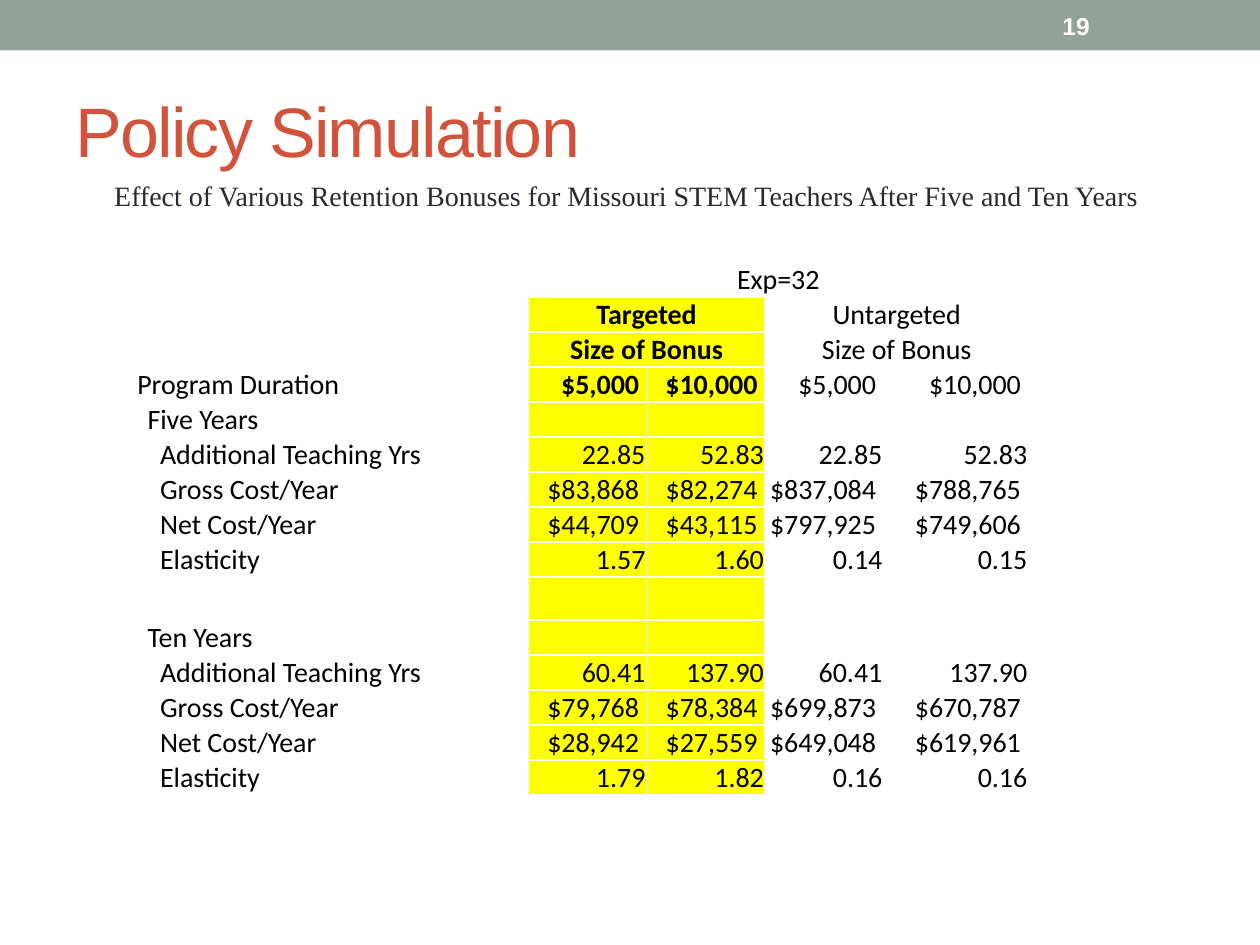
"""Build the Policy Simulation slide with its retention bonus table."""
from dataclasses import dataclass

from pptx import Presentation
from pptx.dml.color import RGBColor as RGB
from pptx.enum.shapes import MSO_SHAPE as Shape
from pptx.enum.text import MSO_ANCHOR as Anchor, PP_ALIGN as Align
from pptx.util import Pt


@dataclass(frozen=True)
class Theme:
    band: RGB = RGB.from_string("93A299")
    title: RGB = RGB.from_string("D2533C")
    body: RGB = RGB.from_string("292934")
    black: RGB = RGB.from_string("000000")
    white: RGB = RGB.from_string("FFFFFF")
    highlight: RGB = RGB.from_string("FFFF00")
    title_size: float = 40
    text_size: float = 16
    number_size: float = 14
    empty_size: float = 10
    sans: str = "Arial"
    serif: str = "Times New Roman"
    table: str = "Calibri"


class Deck:
    def __init__(self, theme, width, height):
        self.theme = theme
        self.prs = Presentation()
        self.prs.slide_width, self.prs.slide_height = Pt(width), Pt(height)
        self.s = self.prs.slides.add_slide(self.prs.slide_layouts[6])

    def run(self, p, text, font, size, color, bold=False, spacing=None):
        r = p.add_run()
        r.text = text
        f = r.font
        f.name, f.size, f.bold = font, Pt(size), bold
        f.color.rgb = color
        if spacing is not None:
            r._r.get_or_add_rPr().set("spc", str(spacing * 100))

    def rect(self, box, color):
        sp = self.s.shapes.add_shape(Shape.RECTANGLE, *map(Pt, box))
        sp.shadow.inherit = False
        sp.fill.solid()
        sp.fill.fore_color.rgb = color
        sp.line.fill.background()

    def text(self, box, text, font, size, color, anchor=Anchor.TOP,
             left=7.2, top=3.6, **style):
        tf = self.s.shapes.add_textbox(*map(Pt, box)).text_frame
        tf.word_wrap = True
        tf.vertical_anchor = anchor
        tf.margin_left, tf.margin_top = Pt(left), Pt(top)
        self.run(tf.paragraphs[0], text, font, size, color, **style)

    def table(self, box, widths, heights):
        table = self.s.shapes.add_table(
            len(heights), len(widths), *map(Pt, box)).table
        table.first_row = table.horz_banding = False
        for column, width in zip(table.columns, widths):
            column.width = Pt(width)
        for row, height in zip(table.rows, heights):
            row.height = Pt(height)
        return table

    def cell(self, cell, text, align, left=0.7, bold=False, fill=None):
        t = self.theme
        cell.vertical_anchor = Anchor.BOTTOM
        cell.margin_left, cell.margin_right = Pt(left), Pt(0.7)
        cell.margin_top, cell.margin_bottom = Pt(0.7), Pt(0)
        if fill is None:
            cell.fill.background()
        else:
            cell.fill.solid()
            cell.fill.fore_color.rgb = fill
        p = cell.text_frame.paragraphs[0]
        p.alignment = align
        if text:
            self.run(p, text, t.table, t.text_size, t.black, bold)
        else:
            end = p._p.get_or_add_endParaRPr()
            end.set("sz", str(int(t.empty_size * 100)))


MEASURES = ["Additional Teaching Yrs", "Gross Cost/Year", "Net Cost/Year",
            "Elasticity"]
FIVE_YEARS = [
    ["22.85", "52.83", "22.85", "52.83"],
    ["$83,868 ", "$82,274 ", "$837,084 ", "$788,765 "],
    ["$44,709 ", "$43,115 ", "$797,925 ", "$749,606 "],
    ["1.57", "1.60", "0.14", "0.15"],
]
TEN_YEARS = [
    ["60.41", "137.90", "60.41", "137.90"],
    ["$79,768 ", "$78,384 ", "$699,873 ", "$670,787 "],
    ["$28,942 ", "$27,559 ", "$649,048 ", "$619,961 "],
    ["1.79", "1.82", "0.16", "0.16"],
]
BLANK = [""] * 4
INDENTS = [0.7, 6.5, 13.7]
COLUMNS = [206, 18, 67.7, 67.7, 67.7, 82.8]
HEADER_ROWS, BONUS_ROW, GAP_ROW = 3, 3, 9


def duration(name, values):
    return [(1, name, BLANK)] + [
        (2, measure, row) for measure, row in zip(MEASURES, values)]


def bonus_table(deck):
    rows = [
        (0, "", ["Exp=32", "", "", ""]),
        (0, "", ["Targeted", "", "Untargeted", ""]),
        (0, "", ["Size of Bonus", "", "Size of Bonus", ""]),
        (0, "Program Duration", ["$5,000 ", "$10,000 "] * 2),
        *duration("Five Years", FIVE_YEARS),
        (0, "", BLANK),
        *duration("Ten Years", TEN_YEARS),
    ]
    heights = [24.6 if i == GAP_ROW else 20 for i in range(len(rows))]
    table = deck.table((77.8, 149.8, sum(COLUMNS), sum(heights)),
                       COLUMNS, heights)
    for i, (level, label, values) in enumerate(rows):
        deck.cell(table.cell(i, 0), label, Align.LEFT, INDENTS[level])
        deck.cell(table.cell(i, 1), "", Align.LEFT)
        for j, value in enumerate(values):
            targeted = i > 0 and j < 2
            deck.cell(table.cell(i, j + 2), value,
                      Align.CENTER if i < HEADER_ROWS else Align.RIGHT,
                      bold=targeted and i <= BONUS_ROW,
                      fill=deck.theme.highlight if targeted else None)
    table.cell(0, 2).merge(table.cell(0, 5))
    for i in range(1, HEADER_ROWS):
        for j in (2, 4):
            table.cell(i, j).merge(table.cell(i, j + 1))


def main():
    t = Theme()
    deck = Deck(t, 720, 540)
    deck.rect((0, 0, 720, 28.8), t.band)
    deck.text((600, 1.5, 84, 26), "19", t.sans, t.number_size, t.white,
              anchor=Anchor.MIDDLE, bold=True)
    deck.text((48, 97.2, 636, 46),
              "Effect of Various Retention Bonuses for Missouri STEM "
              "Teachers After Five and Ten Years",
              t.serif, t.text_size, t.body, left=17.3, top=5)
    deck.text((36, 42, 648, 78), "Policy Simulation", t.sans, t.title_size,
              t.title, top=8, spacing=-1)
    bonus_table(deck)
    deck.prs.save("out.pptx")


if __name__ == "__main__":
    main()
